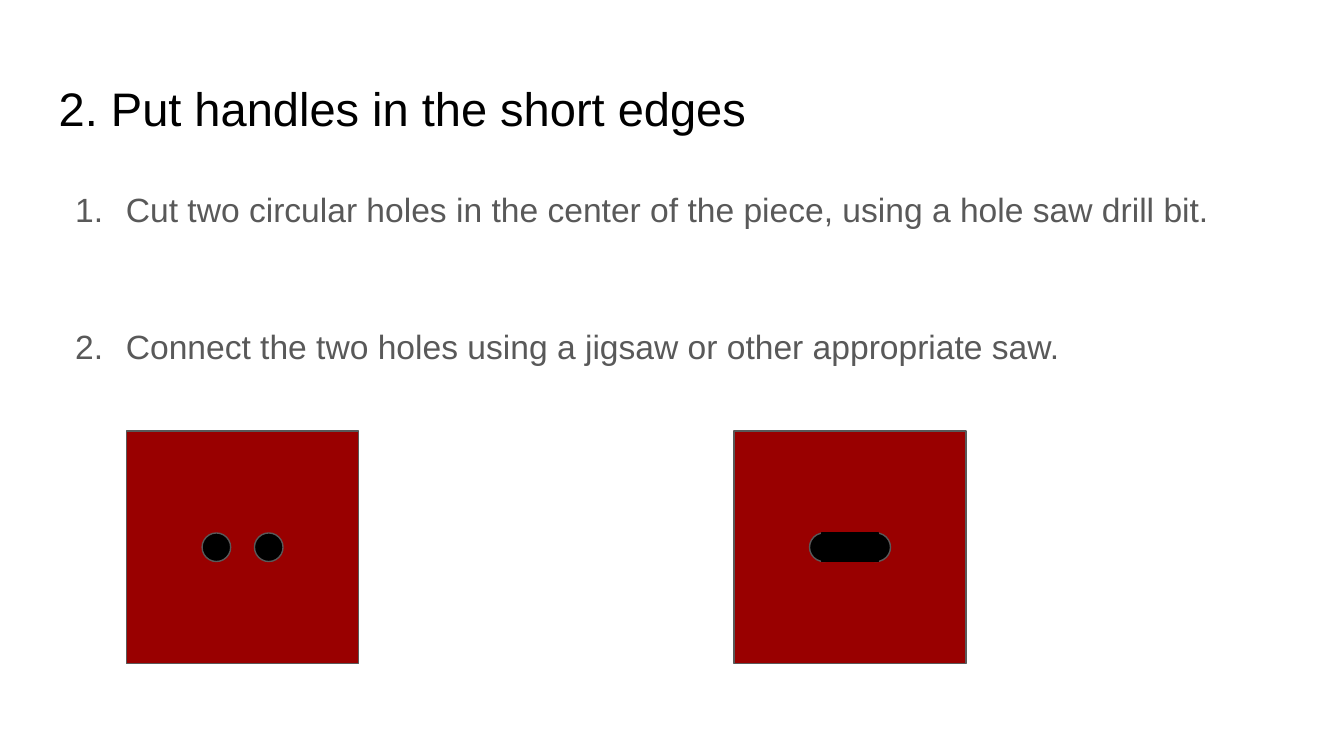
from dataclasses import dataclass

from lxml import etree
from pptx import Presentation
from pptx import util as u
from pptx.dml.color import RGBColor
from pptx.enum import shapes, text
from pptx.oxml.ns import qn

COLORS = {"title": "000000", "body": "595959", "wood": "990000", "hole": "000000"}
FONT = "Arial"
SIDE = 4.39          # side of a wooden piece, cm
HOLE = 0.54          # hole diameter, cm
HOLE_GAP = 0.99      # distance between hole centres, cm
SLOT = 1.07          # width of the cut joining the holes, cm
PIECE_TOP = 8.15


@dataclass
class Piece:
    left: float
    joined: bool


STEPS = [
    "Cut two circular holes in the center of the piece, using a hole saw drill bit.",
    "Connect the two holes using a jigsaw or other appropriate saw.",
]
PIECES = [Piece(2.39, False), Piece(13.87, True)]


def rgb(name: str) -> RGBColor:
    return RGBColor.from_string(COLORS[name])


def place(shape, left: float, top: float, width: float, height: float) -> None:
    shape.left, shape.top = u.Cm(left), u.Cm(top)
    shape.width, shape.height = u.Cm(width), u.Cm(height)


def set_frame(frame, anchor) -> None:
    frame.word_wrap = True
    frame.auto_size = text.MSO_AUTO_SIZE.NONE
    frame.vertical_anchor = anchor
    frame.margin_left = frame.margin_right = u.Cm(0.25)
    frame.margin_top = frame.margin_bottom = u.Cm(0.25)


def style(paragraph, size: float, color: str) -> None:
    paragraph.alignment = text.PP_ALIGN.LEFT
    for run in paragraph.runs:
        run.font.name = FONT
        run.font.size = u.Pt(size)
        run.font.color.rgb = rgb(color)


def number(paragraph) -> None:
    """Give the paragraph a hanging automatic number."""
    props = paragraph._p.get_or_add_pPr()
    props.set("marL", str(u.Cm(1.27)))
    props.set("indent", str(-u.Cm(0.96)))
    color = etree.SubElement(props, qn("a:buClr"))
    etree.SubElement(color, qn("a:srgbClr"), val=COLORS["body"])
    etree.SubElement(props, qn("a:buFont"), typeface=FONT)
    etree.SubElement(props, qn("a:buAutoNum"), type="arabicPeriod")


def draw(slide, kind, center: tuple[float, float], width: float, height: float,
         fill: str, line: str) -> None:
    x, y = center
    shape = slide.shapes.add_shape(kind, u.Cm(x - width / 2), u.Cm(y - height / 2),
                                   u.Cm(width), u.Cm(height))
    shape.shadow.inherit = False
    shape.fill.solid()
    shape.fill.fore_color.rgb = rgb(fill)
    shape.line.color.rgb = rgb(line)
    shape.line.width = u.Pt(0.75)


def draw_piece(slide, piece: Piece) -> None:
    x, y = piece.left + SIDE / 2, PIECE_TOP + SIDE / 2
    kinds = shapes.MSO_SHAPE
    draw(slide, kinds.RECTANGLE, (x, y), SIDE, SIDE, "wood", "body")
    for side in (-1, 1):
        draw(slide, kinds.OVAL, (x + side * HOLE_GAP / 2, y), HOLE, HOLE, "hole", "body")
    if piece.joined:
        draw(slide, kinds.RECTANGLE, (x, y), SLOT, HOLE, "hole", "hole")


def main() -> None:
    deck = Presentation()
    deck.slide_width, deck.slide_height = u.Cm(25.4), u.Cm(14.29)
    slide = deck.slides.add_slide(deck.slide_layouts[5])

    # Title
    title = slide.shapes.title
    place(title, 0.86, 1.24, 23.67, 1.6)
    title.text_frame.text = "2. Put handles in the short edges"
    set_frame(title.text_frame, text.MSO_ANCHOR.MIDDLE)
    style(title.text_frame.paragraphs[0], 25.2, "title")

    # Numbered steps
    steps = slide.shapes.add_textbox(u.Cm(0.86), u.Cm(3.2), u.Cm(23.67), u.Cm(4.95))
    steps.text_frame.text = "\n".join(STEPS)
    set_frame(steps.text_frame, text.MSO_ANCHOR.TOP)
    for index, step in enumerate(steps.text_frame.paragraphs):
        style(step, 18, "body")
        step.line_spacing = 1.15
        step.space_before = u.Pt(49 if index else 0)
        number(step)

    # Wooden pieces: drilled, then sawn into a handle
    for piece in PIECES:
        draw_piece(slide, piece)

    deck.save("out.pptx")


if __name__ == "__main__":
    main()
